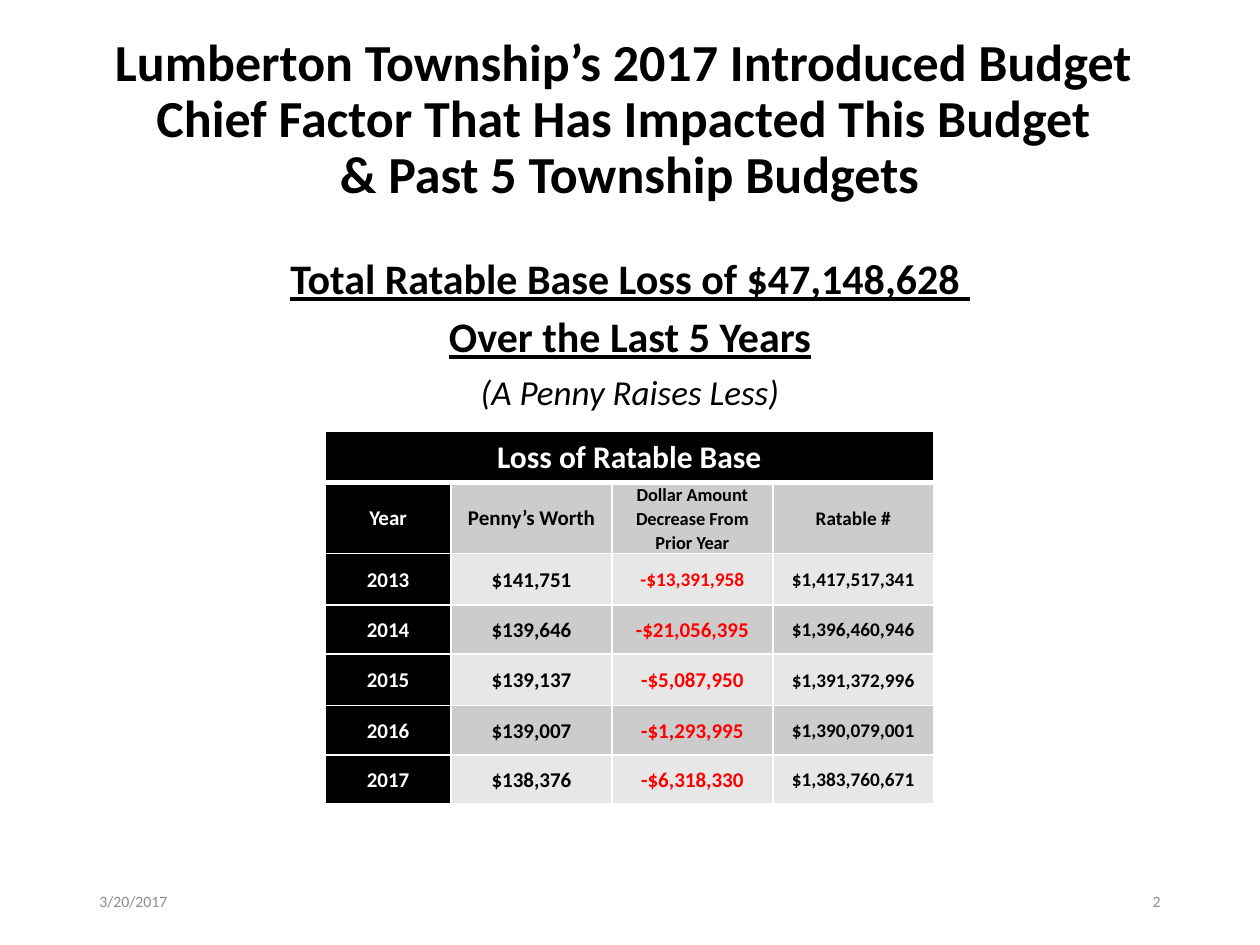
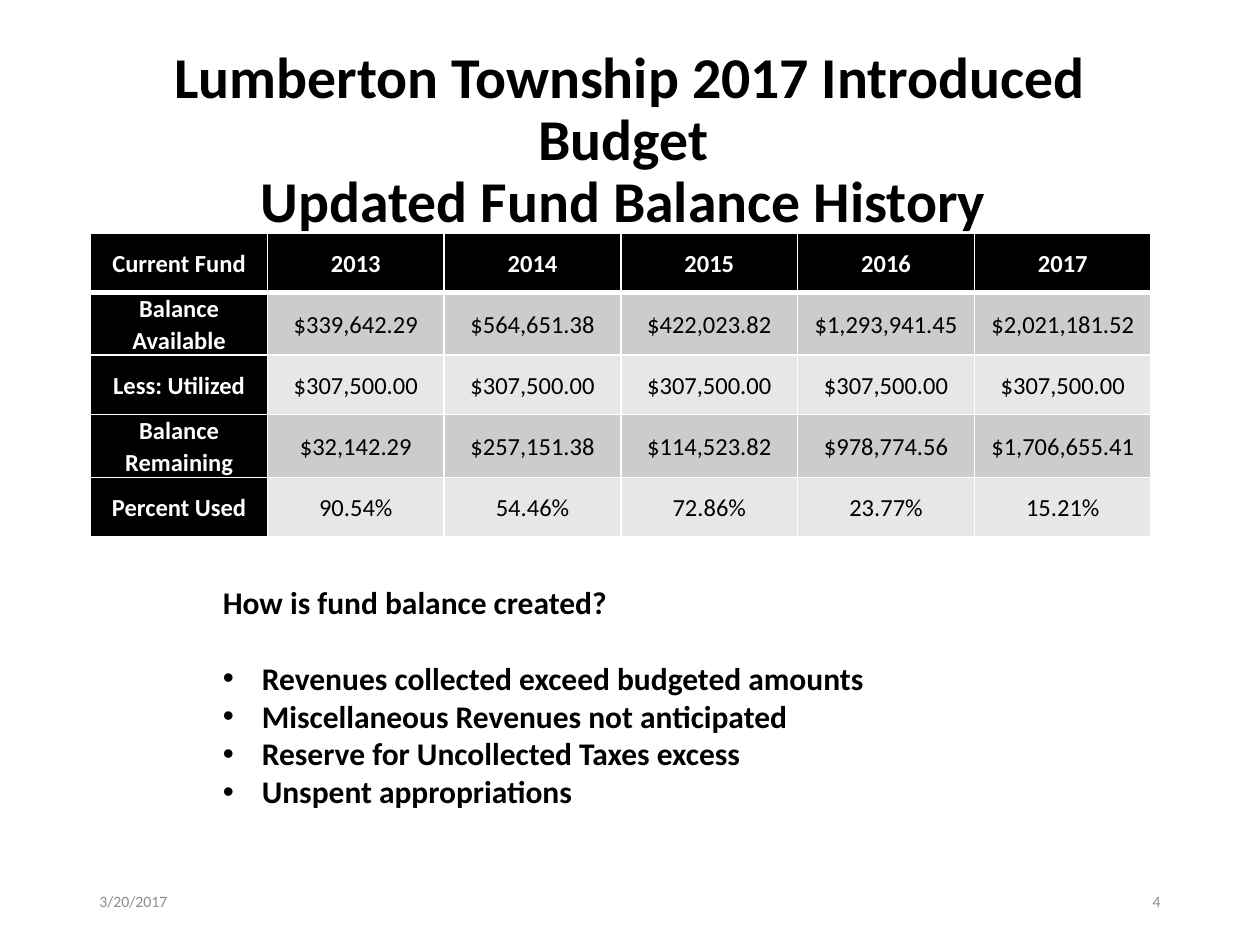
from pptx import Presentation
from pptx.dml.color import RGBColor
from pptx.enum.text import MSO_ANCHOR, PP_ALIGN
from pptx.oxml import parse_xml
from pptx.oxml.ns import nsdecls
from pptx.util import Inches, Pt

FONT = "Calibri"
BLACK, WHITE, RED, GREY = "000000", "FFFFFF", "FF0000", "8C8C8C"
BANDS = ["CCCCCC", "E7E7E7"]
MID = PP_ALIGN.CENTER
TITLE = {"bold": True}
COLS = 100
UNIT = Inches(10) // COLS


def hue(code):
    return RGBColor.from_string(code)


def span(*cells):
    return [round(cell * UNIT) for cell in cells]


def put(item, form):
    for name, value in form.items():
        setattr(item, name, value)


def write(par, text, size, tone=BLACK, form=None, lay=None):
    par.text = text
    put(par, lay or {})
    put(par.font, {"name": FONT, "size": Pt(size), **(form or {})})
    par.font.color.rgb = hue(tone)
    for run in par.runs:
        put(run.font, {"name": FONT, "size": Pt(size), **(form or {})})
        run.font.color.rgb = hue(tone)


def text_box(slide, area, lines, anchor=MSO_ANCHOR.TOP):
    frame = slide.shapes.add_textbox(*span(*area)).text_frame
    put(frame, {"word_wrap": True, "vertical_anchor": anchor})
    for row, line in enumerate(lines):
        par = frame.add_paragraph() if row else frame.paragraphs[0]
        write(par, **line)
    return frame


def title(slide, area, lines, size):
    line = {"text": "\v".join(lines), "size": size, "form": TITLE,
            "lay": {"alignment": MID, "line_spacing": 0.9}}
    text_box(slide, area, [line], MSO_ANCHOR.MIDDLE)


def footer(slide, page):
    sides = [(6.9, "3/20/2017", PP_ALIGN.LEFT), (70.6, page, PP_ALIGN.RIGHT)]
    for left, text, side in sides:
        line = {"text": text, "size": 9, "tone": GREY, "lay": {"alignment": side}}
        text_box(slide, (left, 69.5, 22.5, 4), [line], MSO_ANCHOR.MIDDLE)


def bullet(par):
    props = par._p.get_or_add_pPr()
    put_in = {"marL": Inches(0.31), "indent": -Inches(0.31)}
    for name, value in put_in.items():
        props.set(name, str(value))
    props.append(parse_xml(f'<a:buFont {nsdecls("a")} typeface="Arial"/>'))
    props.append(parse_xml(f'<a:buChar {nsdecls("a")} char="•"/>'))


def edge(cell, row):
    wide = {"T": 3 if row == 1 else 1, "B": 1 if row else 3}
    for spot, side in enumerate("LRTB"):
        line = parse_xml(
            f'<a:ln{side} {nsdecls("a")} w="{Pt(wide.get(side, 1))}">'
            f'<a:solidFill><a:srgbClr val="{WHITE}"/></a:solidFill></a:ln{side}>')
        cell._tc.get_or_add_tcPr().insert(spot, line)


def grid(slide, spot, wides, highs, data, style):
    area = span(*spot, sum(wides), sum(highs))
    table = slide.shapes.add_table(len(highs), len(wides), *area).table
    put(table, {"first_row": False, "horz_banding": False})
    for parts, sizes, name in ((table.columns, wides, "width"),
                               (table.rows, highs, "height")):
        for part, size in zip(parts, span(*sizes)):
            put(part, {name: size})
    for row, texts in enumerate(data):
        for col, text in enumerate(texts):
            cell = table.cell(row, col)
            dark = row == 0 or col == 0
            cell.fill.solid()
            cell.fill.fore_color.rgb = hue(BLACK if dark else BANDS[(row - 1) % 2])
            edge(cell, row)
            side = Inches(0.07)
            put(cell, {"vertical_anchor": MSO_ANCHOR.MIDDLE, "margin_left": side,
                       "margin_right": side, "margin_top": 0, "margin_bottom": 0})
            size, tone, bold = style(row, col)
            write(cell.text_frame.paragraphs[0], text, size,
                  WHITE if dark else tone, {"bold": dark or bold},
                  {"alignment": MID, "line_spacing": 1.07})
    return table


def loss_style(row, col):
    odd = {(0, 0): 18, (1, 2): 10.5, (2, 2): 11}
    size = odd.get((row, col), 11 if col == 3 else 12)
    return size, RED if col == 2 and row > 1 else BLACK, True


def fund_style(row, col):
    return 14, BLACK, False


def loss(slide):
    title(slide, (5, 3.3, 90, 12.5),
          ["Lumberton Township’s 2017 Introduced Budget ",
           "Chief Factor That Has Impacted This Budget ",
           "& Past 5 Township Budgets"], 29.7)
    lay = {"alignment": MID, "line_spacing": 0.9, "space_before": Pt(7.5)}
    strong = {"bold": True, "underline": True}
    lines = [("Total Ratable Base Loss of $47,148,628 ", 24, strong),
             ("Over the Last 5 Years", 24, strong),
             ("(A Penny Raises Less)", 20, {"italic": True})]
    text_box(slide, (6.9, 20, 86.2, 47.6),
             [{"text": text, "size": size, "form": form, "lay": lay}
              for text, size, form in lines])
    data = [
        ["Loss of Ratable Base", "", "", ""],
        ["Year", "Penny’s Worth", "Dollar Amount Decrease From Prior Year", "Ratable #"],
        ["2013", "$141,751", "-$13,391,958", "$1,417,517,341"],
        ["2014", "$139,646", "-$21,056,395", "$1,396,460,946"],
        ["2015", "$139,137", "-$5,087,950", "$1,391,372,996"],
        ["2016", "$139,007", "-$1,293,995", "$1,390,079,001"],
        ["2017", "$138,376", "-$6,318,330", "$1,383,760,671"],
    ]
    table = grid(slide, (25.8, 34.2), [10] + [12.77] * 3,
                 [4.1, 5.3, 4.1, 3.9, 4.1, 3.9, 3.9], data, loss_style)
    table.cell(0, 0).merge(table.cell(0, 3))
    footer(slide, "2")


def fund(slide):
    data = [
        ["Current Fund", "2013", "2014", "2015", "2016", "2017"],
        ["Balance Available", "$339,642.29", "$564,651.38", "$422,023.82",
         "$1,293,941.45", "$2,021,181.52"],
        ["Less: Utilized"] + ["$307,500.00"] * 5,
        ["Balance Remaining", "$32,142.29", "$257,151.38", "$114,523.82",
         "$978,774.56", "$1,706,655.41"],
        ["Percent Used", "90.54%", "54.46%", "72.86%", "23.77%", "15.21%"],
    ]
    grid(slide, (7.2, 18.5), [14.03] * 6, [4.7, 4.4, 4.7, 4.4, 4.7], data, fund_style)
    footer(slide, "4")
    title(slide, (6.9, 4, 86.2, 14.5),
          ["Lumberton Township 2017 Introduced Budget ",
           "Updated Fund Balance History "], 33)
    texts = ["How is fund balance created?",
             "Revenues collected exceed budgeted amounts",
             "Miscellaneous Revenues not anticipated",
             "Reserve for Uncollected Taxes excess",
             "Unspent appropriations"]
    frame = text_box(slide, (16.7, 45.8, 58, 19.2),
                     [{"text": text, "size": 18, "form": TITLE} for text in texts])
    first, *rest = frame.paragraphs
    put(first, {"space_after": Pt(21.6)})
    for par in rest:
        bullet(par)


def main():
    deck = Presentation()
    put(deck, {"slide_width": COLS * UNIT, "slide_height": 75 * UNIT})
    for fill in (loss, fund):
        fill(deck.slides.add_slide(deck.slide_layouts[6]))
    deck.save("out.pptx")


if __name__ == "__main__":
    main()
